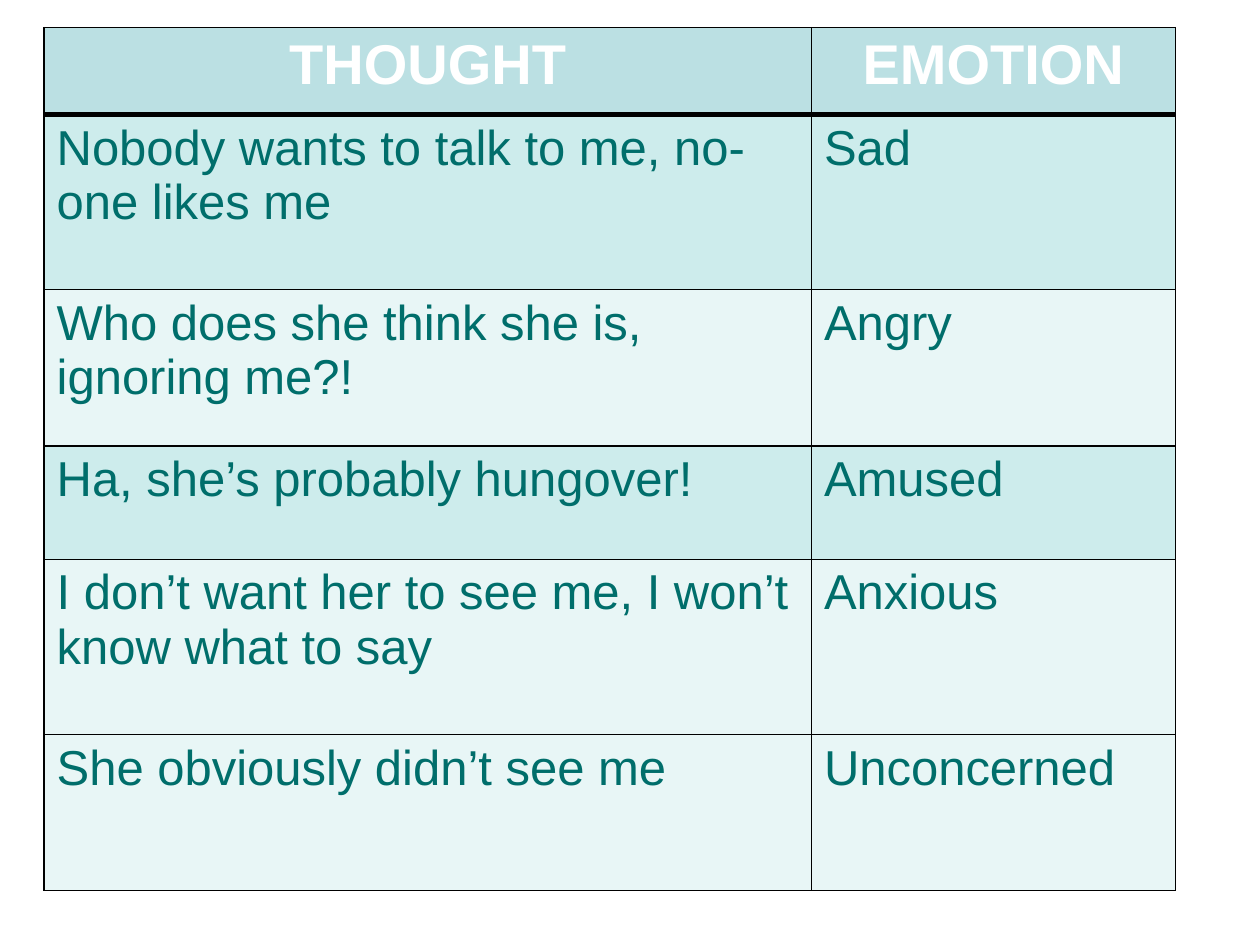
from dataclasses import dataclass

from lxml.etree import SubElement
from pptx import Presentation
from pptx.dml.color import RGBColor
from pptx.enum.text import PP_ALIGN
from pptx.oxml.ns import qn
from pptx.util import Inches, Pt


@dataclass(frozen=True)
class Theme:
    font: str = "Arial"
    header_size: int = 32
    body_size: int = 28
    header_text: str = "FFFFFF"
    body_text: str = "006E6B"
    header_fill: str = "BBE0E3"
    dark_band: str = "CDECEC"
    light_band: str = "E8F6F6"
    border: str = "000000"
    thin: int = 1
    thick: int = 3


THEME = Theme()
HEADINGS = ("THOUGHT", "EMOTION")
COLUMN_WIDTHS = (6.09, 2.89)
HEADER_HEIGHT = 0.69
ROWS = [
    ("Nobody wants to talk to me, no-one likes me", "Sad", 1.39, THEME.dark_band),
    ("Who does she think she is, ignoring me?!", "Angry", 1.24, THEME.light_band),
    ("Ha, she’s probably hungover!", "Amused", 0.9, THEME.dark_band),
    ("I don’t want her to see me, I won’t know what to say", "Anxious", 1.39, THEME.light_band),
    ("She obviously didn’t see me", "Unconcerned", 1.24, THEME.light_band),
]


def set_borders(cell, top, bottom):
    properties = cell._tc.get_or_add_tcPr()
    widths = {"a:lnL": THEME.thin, "a:lnR": THEME.thin, "a:lnT": top, "a:lnB": bottom}
    for tag, width in widths.items():
        line = SubElement(properties, qn(tag), w=str(Pt(width)))
        fill = SubElement(line, qn("a:solidFill"))
        SubElement(fill, qn("a:srgbClr"), val=THEME.border)


def fill_cell(cell, text, fill, is_header):
    cell.fill.solid()
    cell.fill.fore_color.rgb = RGBColor.from_string(fill)
    para = cell.text_frame.paragraphs[0]
    para.alignment = PP_ALIGN.CENTER if is_header else PP_ALIGN.LEFT
    span = para.add_run()
    span.text = text
    span.font.name = THEME.font
    span.font.bold = is_header
    span.font.size = Pt(THEME.header_size if is_header else THEME.body_size)
    color = THEME.header_text if is_header else THEME.body_text
    span.font.color.rgb = RGBColor.from_string(color)


def add_thought_table(page):
    rows = [(*HEADINGS, HEADER_HEIGHT, THEME.header_fill), *ROWS]
    total_height = sum(height for _, _, height, _ in rows)
    table = page.shapes.add_table(
        len(rows), len(HEADINGS), Inches(0.35), Inches(0.22),
        Inches(sum(COLUMN_WIDTHS)), Inches(total_height),
    ).table
    for column, width in zip(table.columns, COLUMN_WIDTHS):
        column.width = Inches(width)
    for index, (thought, emotion, height, fill) in enumerate(rows):
        table.rows[index].height = Inches(height)
        top = THEME.thick if index == 1 else THEME.thin
        bottom = THEME.thick if index == 0 else THEME.thin
        for cell, text in zip(table.rows[index].cells, (thought, emotion)):
            set_borders(cell, top, bottom)
            fill_cell(cell, text, fill, index == 0)


def main():
    deck = Presentation()
    deck.slide_width, deck.slide_height = Inches(10), Inches(7.5)
    page = deck.slides.add_slide(deck.slide_layouts[6])
    add_thought_table(page)
    deck.save("out.pptx")


if __name__ == "__main__":
    main()
